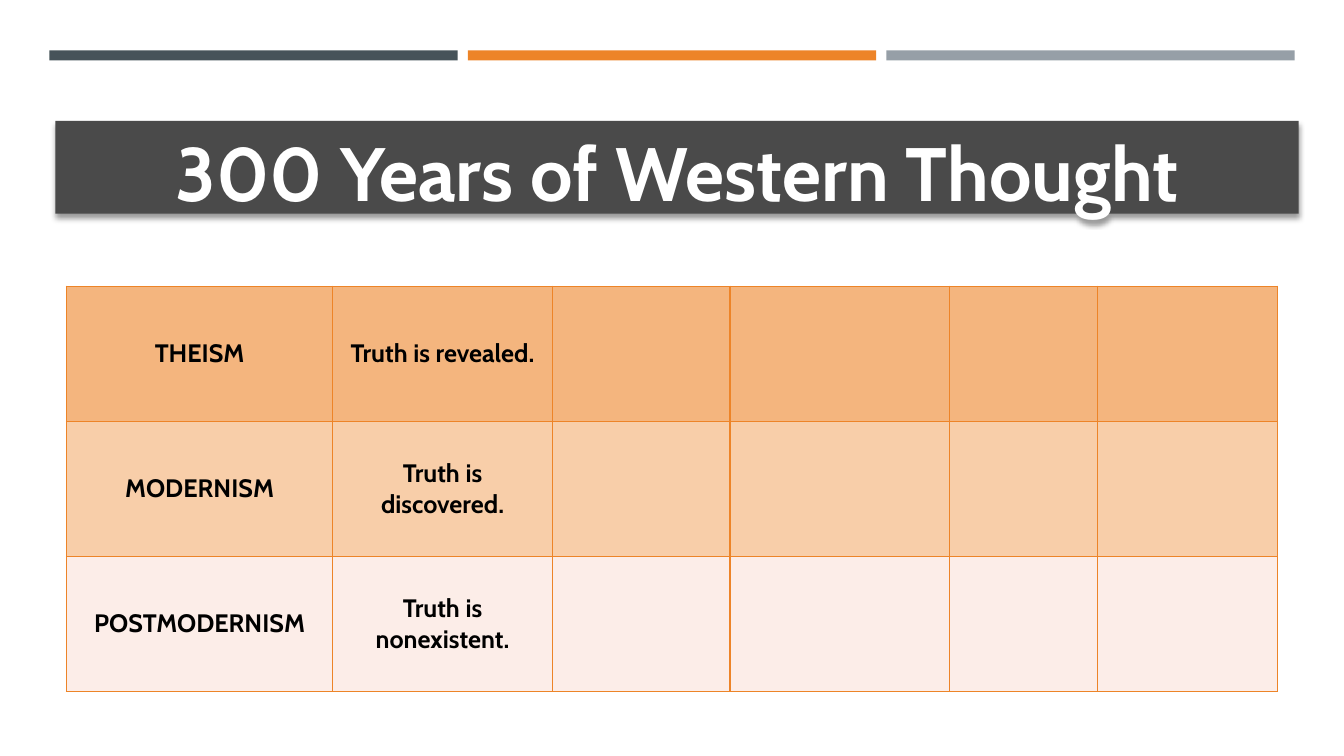
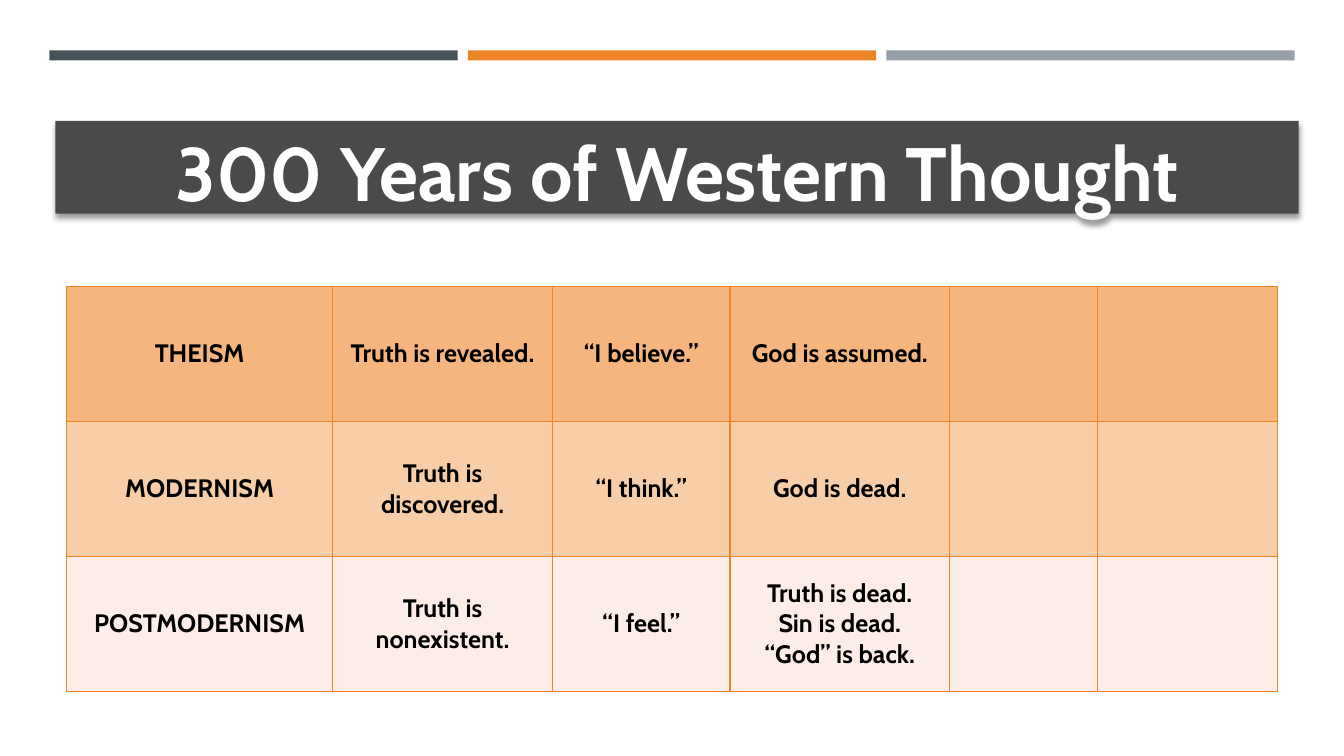
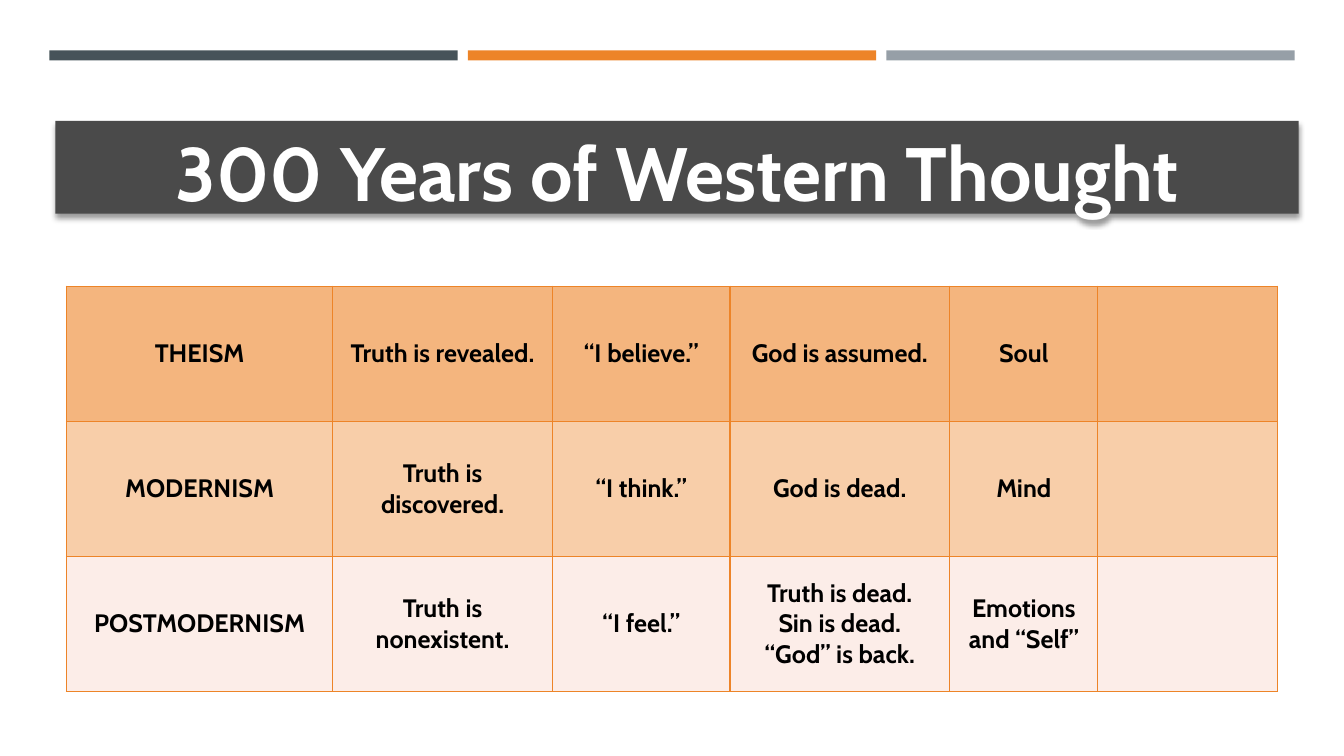
from pptx import Presentation as Deck
from pptx.dml.color import RGBColor as Rgb
from pptx.enum.shapes import MSO_SHAPE as Kind
from pptx.enum.text import MSO_ANCHOR as Anchor, PP_ALIGN as Align
from pptx.oxml import parse_xml
from pptx.oxml.ns import nsdecls
from pptx.util import Inches, Pt

# Colours
SLATE = Rgb(0x46, 0x53, 0x59)
ORANGE = Rgb(0xED, 0x84, 0x28)
GREY = Rgb(0x96, 0x9F, 0xA7)
COAL = Rgb(0x4A, 0x4A, 0x4A)
WHITE = Rgb(0xFF, 0xFF, 0xFF)
BLACK = Rgb(0, 0, 0)
TINTS = [Rgb(0xF4, 0xB5, 0x7E), Rgb(0xF8, 0xCE, 0xA9), Rgb(0xFC, 0xED, 0xE8)]

# Grid, in inches
WIDE, HIGH = 13.33, 7.5
LEFT, TOP = 0.49, 0.5
BAND, THICK, GAP = 4.05, 0.1, 0.1
COLS = [2.64, 2.18, 1.76, 2.18, 1.47, 1.78]
ROW = 1.34

# Text formats
HEAD = {"name": "Cabin", "size": Pt(54), "bold": True}
BODY = {"name": "Cabin", "size": Pt(18), "bold": True}

# Words: one row per world view; each slide shows the first few columns
TITLE = "300 Years of Western Thought"
VIEWS = [
    ["THEISM", "Truth is revealed.", "“I believe.”", "God is assumed.", "Soul"],
    ["MODERNISM", "Truth is discovered.", "“I think.”", "God is dead.", "Mind"],
    ["POSTMODERNISM", "Truth is nonexistent.", "“I feel.”",
     "Truth is dead.\nSin is dead.\n“God” is back.", "Emotions\vand “Self”"],
]
SHOWN = [2, 4, 5]


def write(frame, text, style, color, lead=None):
    frame.text = text
    for par in frame.paragraphs:
        par.alignment = Align.CENTER
        par.line_spacing = lead
        for run in par.runs:
            for key, value in style.items():
                setattr(run.font, key, value)
            run.font.color.rgb = color


def add_box(slide, x, y, w, h, color):
    box = slide.shapes.add_shape(Kind.RECTANGLE, *map(Inches, (x, y, w, h)))
    box.shadow.inherit = False
    box.fill.solid()
    box.fill.fore_color.rgb = color
    box.line.fill.background()
    return box


def add_bands(slide):
    for i, color in enumerate([SLATE, ORANGE, GREY]):
        add_box(slide, LEFT + i * (BAND + GAP), TOP, BAND, THICK, color)


def add_title(slide):
    box = add_box(slide, 0.55, 1.2, 12.33, 0.92, COAL)
    frame = box.text_frame
    frame.word_wrap = True
    frame.vertical_anchor = Anchor.MIDDLE
    write(frame, TITLE, HEAD, WHITE, Pt(70))
    # Soft shadow straight below the bar
    glow = parse_xml(
        f'<a:outerShdw {nsdecls("a")} blurRad="{Pt(4)}" dist="{Pt(3)}" '
        'dir="5400000" rotWithShape="0"><a:srgbClr val="000000">'
        '<a:alpha val="40000"/></a:srgbClr></a:outerShdw>')
    box.element.spPr.find("{*}effectLst").append(glow)


def add_edges(cell):
    props = cell._tc.get_or_add_tcPr()
    for side in "LRTB":
        props.append(parse_xml(
            f'<a:ln{side} {nsdecls("a")} w="{Pt(1)}"><a:solidFill>'
            f'<a:srgbClr val="{ORANGE}"/></a:solidFill></a:ln{side}>'))


def add_views(slide, count):
    rows = len(VIEWS)
    size = (0.66, 2.84, sum(COLS), rows * ROW)
    table = slide.shapes.add_table(rows, len(COLS), *map(Inches, size)).table
    table.first_row = table.horz_banding = False
    for col, width in zip(table.columns, COLS):
        col.width = Inches(width)
    for row, words, tint in zip(table.rows, VIEWS, TINTS):
        row.height = Inches(ROW)
        for i, cell in enumerate(row.cells):
            add_edges(cell)
            cell.fill.solid()
            cell.fill.fore_color.rgb = tint
            cell.vertical_anchor = Anchor.MIDDLE
            if i < count:
                write(cell.text_frame, words[i], BODY, BLACK)


def main():
    deck = Deck()
    deck.slide_width, deck.slide_height = Inches(WIDE), Inches(HIGH)
    for count in SHOWN:
        slide = deck.slides.add_slide(deck.slide_layouts[6])
        add_bands(slide)
        add_views(slide, count)
        add_title(slide)
    deck.save("out.pptx")


if __name__ == "__main__":
    main()
